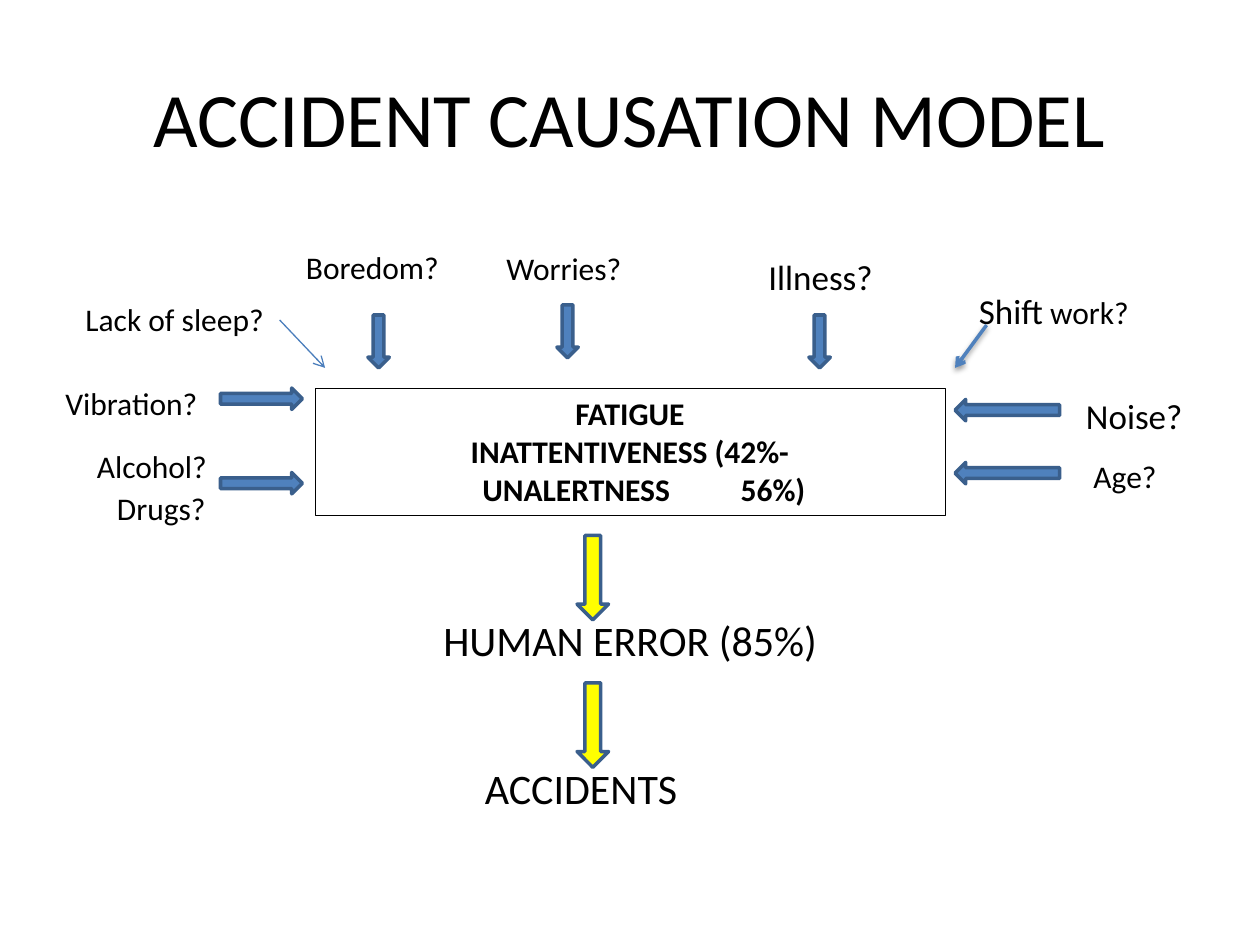
"""Build the accident causation model slide."""
from lxml.etree import SubElement
from pptx import Presentation
from pptx.dml.color import RGBColor
from pptx.enum.shapes import MSO_CONNECTOR, MSO_SHAPE as Shape
from pptx.enum.text import MSO_ANCHOR, PP_ALIGN as Align
from pptx.oxml.ns import qn
from pptx.util import Inches, Pt

COLOURS = {
    "text": "000000",
    "blue": "4F81BD",
    "thin": "4B7EBC",
    "edge": "3A5F8C",
    "yellow": "FFFF00",
}


def colour(name):
    return RGBColor.from_string(COLOURS[name])


def add_span(para, text, size, bold=False):
    span = para.add_run()
    span.text = text
    span.font.name = "Calibri"
    span.font.size = Pt(size)
    span.font.bold = bold
    span.font.color.rgb = colour("text")


deck = Presentation()
deck.slide_width, deck.slide_height = Inches(10), Inches(7.5)
page = deck.slides.add_slide(deck.slide_layouts[6])

title = page.shapes.add_textbox(Inches(0.5), Inches(0.3), Inches(9), Inches(1.25))
title.text_frame.word_wrap = True
title.text_frame.vertical_anchor = MSO_ANCHOR.MIDDLE
title_para = title.text_frame.paragraphs[0]
title_para.alignment = Align.CENTER
add_span(title_para, "ACCIDENT CAUSATION MODEL", 44)

fatigue = page.shapes.add_shape(
    Shape.RECTANGLE, Inches(2.5), Inches(3.08), Inches(5), Inches(1.01)
)
fatigue.shadow.inherit = False
fatigue.fill.background()
fatigue.line.color.rgb = colour("text")
fatigue.line.width = Pt(0.25)
frame = fatigue.text_frame
frame.word_wrap = True
frame.vertical_anchor = MSO_ANCHOR.TOP
for index, (text, align) in enumerate([
    ("FATIGUE", Align.CENTER),
    ("INATTENTIVENESS (42%-", Align.CENTER),
    ("\tUNALERTNESS\t56%)", Align.LEFT),
]):
    para = frame.add_paragraph() if index else frame.paragraphs[0]
    para.alignment = align
    add_span(para, text, 18, bold=True)
tabs = SubElement(para._p.get_or_add_pPr(), qn("a:tabLst"))
for position in (1.23, 3.28):
    SubElement(tabs, qn("a:tab"), pos=str(Inches(position)), algn="l")

labels = [
    (2.33, 1.92, 1.27, 0.4, [("Boredom?", 18)]),
    (3.92, 1.93, 1.12, 0.4, [("Worries?", 18)]),
    (6, 1.98, 1.04, 0.44, [("Illness?", 20)]),
    (7.67, 2.25, 1.41, 0.44, [("Shift", 20), (" work?", 18)]),
    (8.52, 3.08, 0.98, 0.44, [("Noise?", 20)]),
    (8.58, 3.58, 0.71, 0.4, [("Age?", 18)]),
    (3.42, 4.83, 3.19, 0.5, [("HUMAN ERROR (85%)", 24)]),
    (3.75, 6, 1.74, 0.5, [("ACCIDENTS", 24)]),
    (0.58, 2.33, 1.64, 0.4, [("Lack of sleep?", 18)]),
    (0.42, 3, 1.26, 0.4, [("Vibration?", 18)]),
    (0.67, 3.5, 1.09, 0.4, [("Alcohol?", 18)]),
    (0.83, 3.83, 0.91, 0.4, [("Drugs?", 18)]),
]
for left, top, width, height, spans in labels:
    box = page.shapes.add_textbox(
        Inches(left), Inches(top), Inches(width), Inches(height)
    )
    box.text_frame.word_wrap = False
    for text, size in spans:
        add_span(box.text_frame.paragraphs[0], text, size)

arrow_groups = [
    (Shape.DOWN_ARROW, 0.17, 0.42, "blue", [(2.92, 2.5), (4.42, 2.42), (6.42, 2.5)]),
    (Shape.LEFT_ARROW, 0.83, 0.17, "blue", [(7.58, 3.17), (7.58, 3.67)]),
    (Shape.RIGHT_ARROW, 0.65, 0.17, "blue", [(1.75, 3.08), (1.75, 3.75)]),
    (Shape.DOWN_ARROW, 0.25, 0.67, "yellow", [(4.58, 4.25), (4.58, 5.42)]),
]
for kind, width, height, fill, places in arrow_groups:
    for left, top in places:
        arrow = page.shapes.add_shape(
            kind, Inches(left), Inches(top), Inches(width), Inches(height)
        )
        arrow.shadow.inherit = False
        arrow.fill.solid()
        arrow.fill.fore_color.rgb = colour(fill)
        arrow.line.color.rgb = colour("edge")
        arrow.line.width = Pt(2)

for x1, y1, x2, y2, name, weight, shaded in [
    (7.83, 2.58, 7.58, 2.92, "blue", 2, True),
    (2.22, 2.54, 2.58, 2.92, "thin", 0.75, False),
]:
    pointer = page.shapes.add_connector(
        MSO_CONNECTOR.STRAIGHT, Inches(x1), Inches(y1), Inches(x2), Inches(y2)
    )
    pointer.line.color.rgb = colour(name)
    pointer.line.width = Pt(weight)
    SubElement(pointer.line._get_or_add_ln(), qn("a:tailEnd"), type="arrow")
    effects = SubElement(pointer._element.spPr, qn("a:effectLst"))
    if shaded:
        shadow = SubElement(
            effects, qn("a:outerShdw"), blurRad=str(Pt(3.1)), dist=str(Pt(1.6)),
            dir="5400000", rotWithShape="0",
        )
        tint = SubElement(shadow, qn("a:srgbClr"), val=COLOURS["text"])
        SubElement(tint, qn("a:alpha"), val="38000")

deck.save("out.pptx")
